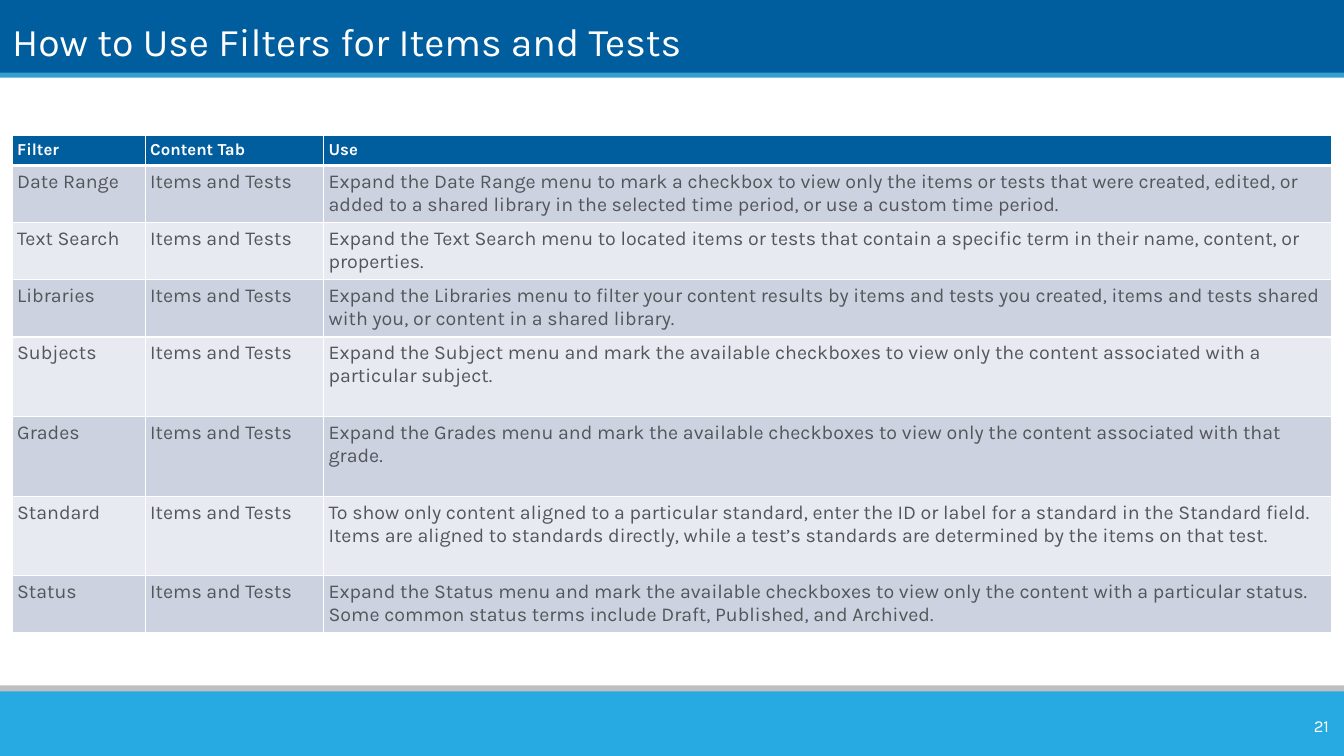
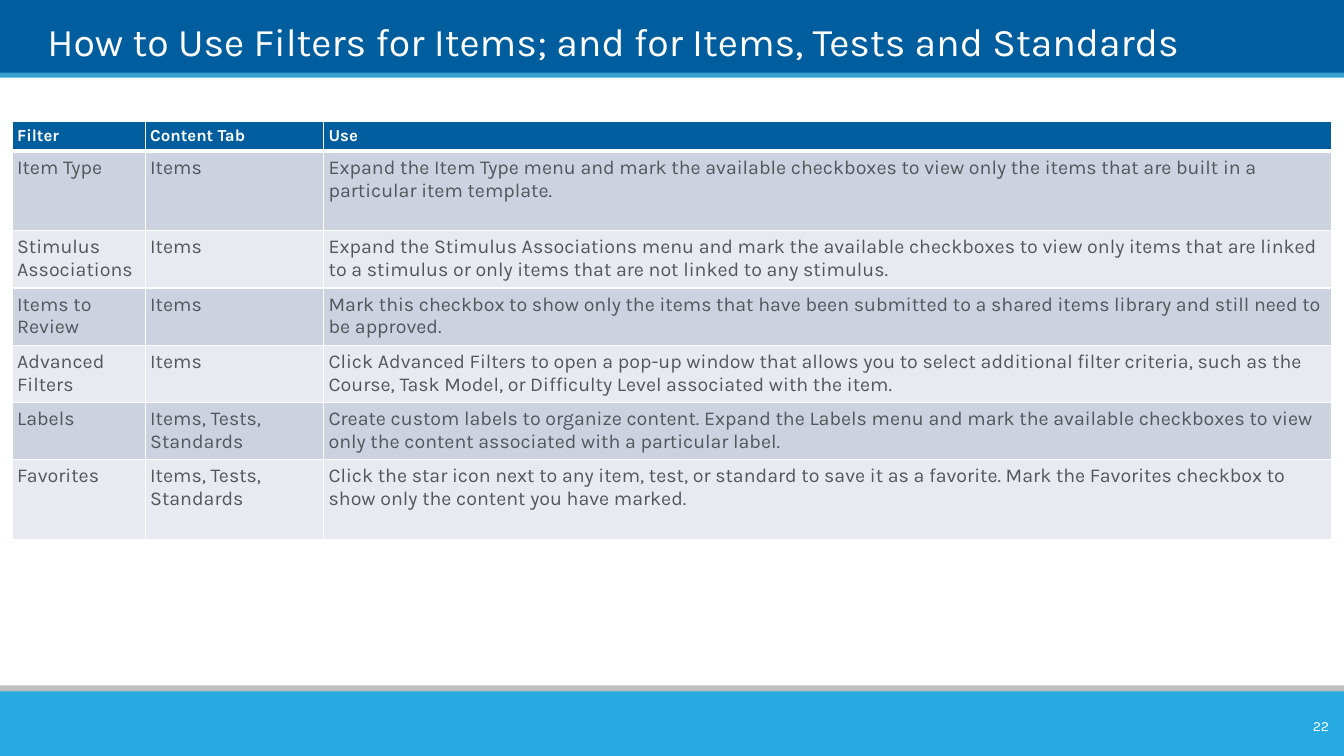
from lxml import etree
from pptx import Presentation
from pptx.dml import color
from pptx.enum import shapes, text
from pptx.oxml import ns
from pptx.util import Inches, Pt

FONT = "Karla"
WHITE, NAVY, GREY = "FFFFFF", "005E9E", "53565A"
ROW_FILLS = ["CCD2DF", "E7EAF0"]
BANDS = [
    (-0.01, 0.75, NAVY),
    (0.72, 0.05, "35A0CE"),
    (6.8, 0.14, "BFBFBF"),
    (6.86, 0.64, "27AAE1"),
]
HEADINGS = ("Filter", "Content Tab", "Use")
COLUMN_WIDTHS = [1.32, 1.77, 10]
HEADER_HEIGHT, ROW_HEIGHT, TALL_HEIGHT = 0.3, 0.55, 0.79
BOTH, ALL_TABS = "Items and Tests", "Items, Tests, Standards"

PAGES = [
    {
        "title": "How to Use Filters for Items and Tests",
        "title_left": 0.12, "title_width": 12.98,
        "number": "21", "number_size": 12,
        "table_top": 1.34, "tall_rows": (4, 5, 6),
        "rows": [
            ("Date Range", BOTH, "Expand the Date Range menu to mark a checkbox to view only the items or tests that were created, edited, or added to a shared library in the selected time period, or use a custom time period."),
            ("Text Search", BOTH, "Expand the Text Search menu to located items or tests that contain a specific term in their name, content, or properties."),
            ("Libraries", BOTH, "Expand the Libraries menu to filter your content results by items and tests you created, items and tests shared with you, or content in a shared library."),
            ("Subjects", BOTH, "Expand the Subject menu and mark the available checkboxes to view only the content associated with a particular subject."),
            ("Grades", BOTH, "Expand the Grades menu and mark the available checkboxes to view only the content associated with that grade."),
            ("Standard", BOTH, "To show only content aligned to a particular standard, enter the ID or label for a standard in the Standard field. Items are aligned to standards directly, while a test’s standards are determined by the items on that test."),
            ("Status", BOTH, "Expand the Status menu and mark the available checkboxes to view only the content with a particular status. Some common status terms include Draft, Published, and Archived."),
        ],
    },
    {
        "title": "How to Use Filters for Items; and for Items, Tests and Standards",
        "title_left": 0.47, "title_width": 12.43,
        "number": "22", "number_size": 10,
        "table_top": 1.2, "tall_rows": (1, 6),
        "rows": [
            ("Item Type", "Items", "Expand the Item Type menu and mark the available checkboxes to view only the items that are built in a particular item template."),
            ("Stimulus Associations", "Items", "Expand the Stimulus Associations menu and mark the available checkboxes to view only items that are linked to a stimulus or only items that are not linked to any stimulus."),
            ("Items to Review", "Items", "Mark this checkbox to show only the items that have been submitted to a shared items library and still need to be approved."),
            ("Advanced Filters", "Items", "Click Advanced Filters to open a pop-up window that allows you to select additional filter criteria, such as the Course, Task Model, or Difficulty Level associated with the item."),
            ("Labels", ALL_TABS, "Create custom labels to organize content. Expand the Labels menu and mark the available checkboxes to view only the content associated with a particular label."),
            ("Favorites", ALL_TABS, "Click the star icon next to any item, test, or standard to save it as a favorite. Mark the Favorites checkbox to show only the content you have marked."),
        ],
    },
]


def paint(target, hex_color):
    if hasattr(target, "solid"):
        target.solid()
        target = target.fore_color
    target.rgb = color.RGBColor.from_string(hex_color)


def write(frame, words, size, hex_color, bold=False):
    frame.word_wrap = True
    para = frame.paragraphs[0]
    para.text = words
    para.font.name = FONT
    para.font.size = Pt(size)
    para.font.bold = bold
    paint(para.font.color, hex_color)
    return para


deck = Presentation()
deck.slide_width, deck.slide_height = Inches(13.33), Inches(7.5)

for content in PAGES:
    page = deck.slides.add_slide(deck.slide_layouts[6])

    for top, height, fill in BANDS:
        band = page.shapes.add_shape(shapes.MSO_SHAPE.RECTANGLE, 0, Inches(top), deck.slide_width, Inches(height))
        band.shadow.inherit = False
        band.line.fill.background()
        paint(band.fill, fill)

    title = page.shapes.add_textbox(Inches(content["title_left"]), Inches(0.07), Inches(content["title_width"]), Inches(0.57))
    frame = title.text_frame
    frame.margin_left = frame.margin_top = frame.margin_right = frame.margin_bottom = 0
    frame.vertical_anchor = text.MSO_ANCHOR.BOTTOM
    write(frame, content["title"], 28, WHITE)

    rows = [HEADINGS] + content["rows"]
    heights = [HEADER_HEIGHT] + [
        TALL_HEIGHT if index in content["tall_rows"] else ROW_HEIGHT for index in range(1, len(rows))
    ]
    table = page.shapes.add_table(
        len(rows), len(HEADINGS), Inches(0.12), Inches(content["table_top"]),
        Inches(sum(COLUMN_WIDTHS)), Inches(sum(heights)),
    ).table
    table.horz_banding = False
    for column, width in zip(table.columns, COLUMN_WIDTHS):
        column.width = Inches(width)

    for row_index, (row, height) in enumerate(zip(rows, heights)):
        table.rows[row_index].height = Inches(height)
        header = row_index == 0
        for column_index, words in enumerate(row):
            cell = table.cell(row_index, column_index)
            cell.margin_left = cell.margin_top = cell.margin_right = cell.margin_bottom = Inches(0.05)
            write(cell.text_frame, words, 12 if header else 14, WHITE if header else GREY, header)
            properties = cell._tc.get_or_add_tcPr()
            for side in "LRTB":
                thick = (row_index, side) in ((0, "B"), (1, "T"))
                line = etree.SubElement(properties, ns.qn(f"a:ln{side}"), w=str(Pt(3 if thick else 1)))
                solid = etree.SubElement(line, ns.qn("a:solidFill"))
                etree.SubElement(solid, ns.qn("a:srgbClr"), val=WHITE)
            paint(cell.fill, NAVY if header else ROW_FILLS[(row_index - 1) % 2])

    number = page.shapes.add_textbox(Inches(12.51), Inches(7.05), Inches(0.77), Inches(0.3))
    number.text_frame.vertical_anchor = text.MSO_ANCHOR.MIDDLE
    para = write(number.text_frame, content["number"], content["number_size"], WHITE)
    para.alignment = text.PP_ALIGN.RIGHT

deck.save("out.pptx")
